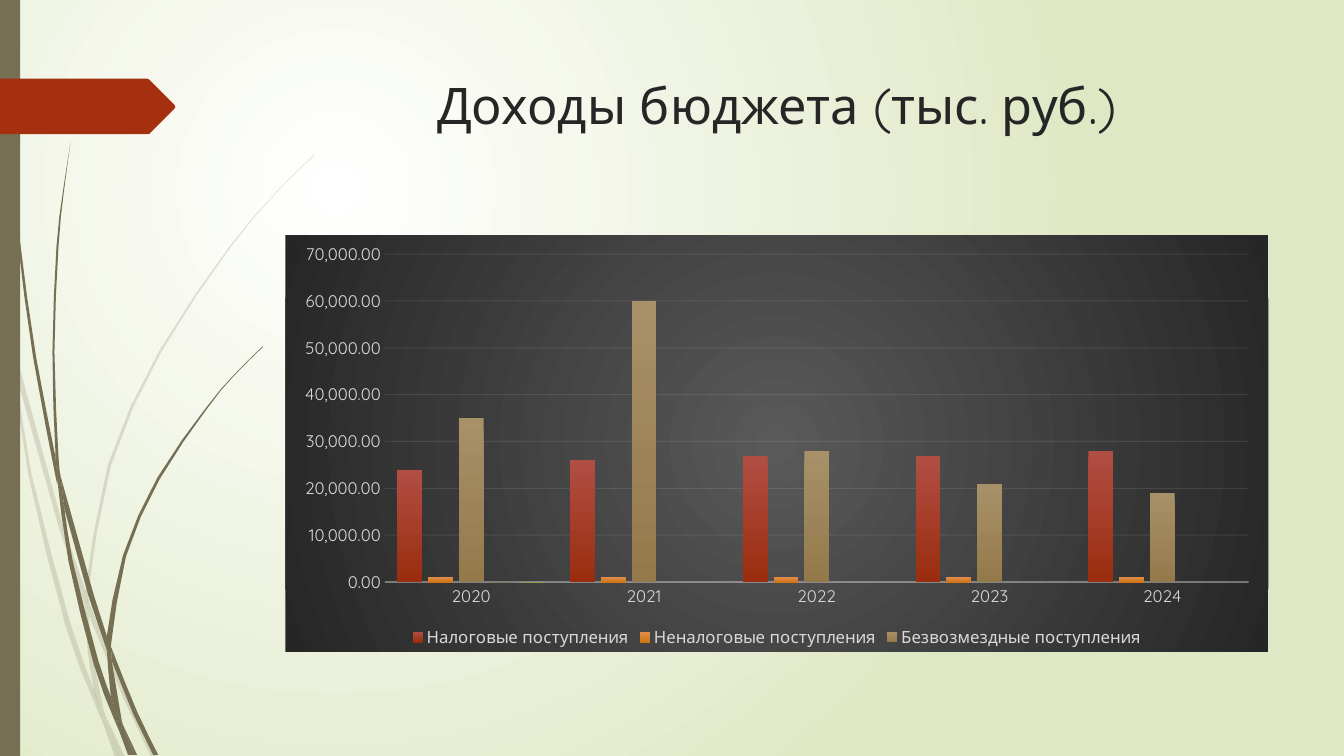
from pptx import Presentation
from pptx.chart.data import CategoryChartData
from pptx.dml.color import RGBColor
from pptx.dml.fill import FillFormat
from pptx.enum.chart import XL_CHART_TYPE as ChartType, XL_LEGEND_POSITION as LegendPosition
from pptx.enum.chart import XL_TICK_MARK as TickMark
from pptx.enum.shapes import MSO_SHAPE as Preset
from pptx.enum.text import PP_ALIGN as Align
from pptx.oxml import parse_xml
from pptx.oxml.ns import nsdecls, qn
from pptx.util import Inches, Pt

FONT = "Quicksand"
TITLE = "Доходы бюджета (тыс. руб.)"
YEARS = ["2020", "2021", "2022", "2023", "2024"]
SERIES = [
    ("Налоговые поступления", [24000, 26000, 27000, 27000, 28000], "B14E43", "9A2D0F"),
    ("Неналоговые поступления", [1000, 1000, 1000, 1000, 1000], "E18D4C", "CF7516"),
    ("Безвозмездные поступления", [35000, 60000, 28000, 21000, 19000], "A89068", "947A4B"),
    ("Series 4", [0], "819367", "6A7D4D"),
    ("Series 5", [0], "9DB265", "889E47"),
]
HIDDEN_LEGEND_ENTRIES = [3, 4]

WHITE = RGBColor(0xFF, 0xFF, 0xFF)
BLACK = RGBColor(0, 0, 0)
PALE_GREEN = RGBColor(0xDF, 0xE8, 0xC4)
OLIVE = RGBColor(0x76, 0x6F, 0x54)
RUST = RGBColor(0xA5, 0x30, 0x10)
INK = RGBColor(0x26, 0x26, 0x26)
GREY = RGBColor(0x59, 0x59, 0x59)
LABEL = RGBColor(0xD9, 0xD9, 0xD9)
RULE = RGBColor(0xF2, 0xF2, 0xF2)

MARKER = [(0, 0.78), (1.46, 0.78), (1.48, 0.79), (1.73, 1.04), (1.74, 1.06),
          (1.73, 1.08), (1.48, 1.33), (0, 1.33)]

FAINT_BLADES = [
    ([(0.11, 3.5), (0.09, 3.22), (0, 2.82)], [(0, 2.99), (0.1, 3.44)]),
    ([(0.14, 3.45), (0.62, 5.2), (0.85, 5.86)],
     [(0.84, 5.99), (0.58, 5.22), (0.17, 3.76)]),
    ([(0.88, 5.96), (0.92, 6.07), (1.27, 6.92), (1.55, 7.51)],
     [(1.5, 7.51), (1.23, 6.94), (0.88, 6.1)]),
    ([(1.05, 7.11), (1.24, 7.51)], [(1.19, 7.51)]),
    ([(0.11, 3.5), (0.17, 3.76), (0.31, 4.69), (0.7, 6.19), (0.93, 6.83), (0.99, 7.07)],
     [(1.01, 7.14), (0.92, 6.93), (0.65, 6.21), (0.28, 4.7), (0.11, 3.5)]),
    ([(0.84, 5.99), (0.87, 6.46), (0.93, 6.83), (0.96, 6.92), (1.05, 7.11)],
     [(1.03, 7.06), (0.91, 6.46), (0.88, 6.1)]),
    ([(0.88, 5.96), (0.88, 5.84), (1.1, 4.62), (1.6, 3.49), (2.29, 2.45), (2.68, 1.98),
      (2.9, 1.75), (3.12, 1.54)],
     [(3.12, 1.53), (2.89, 1.75), (2.68, 1.97), (2.28, 2.44), (1.58, 3.48), (1.07, 4.61),
      (0.85, 5.84), (0.85, 5.86)]),
    ([(1.01, 7.14), (1.14, 7.51)], [(1.19, 7.51)]),
    ([(0.88, 6.1), (0.88, 5.96), (0.85, 5.86)], [(0.84, 5.99), (0.88, 6.08)]),
    ([(0.93, 6.83), (0.99, 7.07), (1.01, 7.14), (1.19, 7.51)],
     [(1.19, 7.51), (1.05, 7.11), (0.96, 6.92)]),
]
DARK_BLADES = [
    ([(0.03, 0), (0.04, 0.48), (0.07, 1.1), (0.17, 2.33), (0.33, 3.55), (0.56, 4.77)],
     [(0.57, 4.81), (0.55, 4.53), (0.36, 3.55), (0.19, 2.32), (0.08, 1.09), (0.05, 0.48),
      (0.04, 0)]),
    ([(0.6, 4.72), (0.93, 5.9), (1.06, 6.31)], [(1.06, 6.45), (0.88, 5.92), (0.64, 5.05)]),
    ([(1.1, 6.41), (1.13, 6.49), (1.36, 7.06), (1.57, 7.49)],
     [(1.52, 7.49), (1.32, 7.08), (1.11, 6.56)]),
    ([(0.57, 4.77), (0.64, 5.05), (0.72, 5.56), (0.98, 6.57), (1.1, 6.91), (1.16, 7.17)],
     [(1.17, 7.22), (1.11, 7.08), (0.93, 6.59), (0.68, 5.57), (0.57, 4.77)]),
    ([(0.6, 4.72), (0.58, 4.53), (0.54, 3.49), (0.58, 2.45), (0.63, 1.93), (0.7, 1.41)],
     [(0.7, 1.41), (0.62, 1.93), (0.56, 2.45), (0.52, 3.49), (0.55, 4.49), (0.6, 4.72)]),
    ([(1.22, 7.19), (1.36, 7.49)], [(1.33, 7.49)]),
    ([(0.55, 4.49), (0.6, 4.72), (0.64, 5.05)], [(0.57, 4.77), (0.55, 4.53)]),
    ([(1.11, 6.33), (1.25, 5.52), (1.58, 4.76), (2.05, 4.06), (2.31, 3.74), (2.61, 3.44)],
     [(2.6, 3.44), (2.31, 3.73), (2.04, 4.05), (1.56, 4.74), (1.22, 5.51), (1.06, 6.31),
      (1.1, 6.41)]),
    ([(1.17, 7.22), (1.27, 7.49)], [(1.31, 7.49)]),
    ([(1.06, 6.45), (1.1, 6.91), (1.16, 7.06), (1.22, 7.19)], [(1.21, 7.16), (1.11, 6.56)]),
    ([(1.06, 6.31), (1.06, 6.45), (1.11, 6.56)], [(1.1, 6.41)]),
    ([(1.1, 6.91), (1.16, 7.17), (1.17, 7.22), (1.3, 7.49)],
     [(1.33, 7.49), (1.22, 7.19), (1.16, 7.06)]),
]


def smooth(knots):
    if len(knots) < 4:
        return knots
    padded = [knots[0], *knots, knots[-1]]
    points = [knots[0]]
    for a, b, c, d in zip(padded, padded[1:], padded[2:], padded[3:]):
        middle = tuple((9 * (q + r) - p - s) / 16 for p, q, r, s in zip(a, b, c, d))
        points += [middle, c]
    return points


def set_opacity(element, percent):
    for colour in element.iter(qn("a:srgbClr")):
        colour.append(parse_xml(f'<a:alpha {nsdecls("a")} val="{percent * 1000}"/>'))


def paint(shape, colour):
    shape.fill.solid()
    shape.fill.fore_color.rgb = colour
    shape.line.fill.background()
    shape.shadow.inherit = False


def draw_outline(shapes, points, colour):
    corners = [(Inches(x), Inches(y)) for x, y in points]
    builder = shapes.build_freeform(*corners[0], scale=1)
    builder.add_line_segments(corners[1:], close=True)
    shape = builder.convert_to_shape()
    paint(shape, colour)
    return shape


def set_gradient(fill, first, last):
    fill.gradient()
    fill.gradient_angle = 270
    for stop, colour in zip(fill.gradient_stops, (first, last)):
        stop.color.rgb = colour


def make_radial(owner, left, top, right, bottom):
    linear = owner.find(".//" + qn("a:lin"))
    linear.getparent().replace(linear, parse_xml(
        f'<a:path {nsdecls("a")} path="circle"><a:fillToRect l="{left}000" t="{top}000" '
        f'r="{right}000" b="{bottom}000"/></a:path>'))


def set_font(font, size, colour):
    font.name, font.size, font.color.rgb = FONT, Pt(size), colour


def add_title(page):
    box = page.shapes.add_textbox(Inches(2.83), Inches(0.69), Inches(9.75), Inches(1.4))
    box.text_frame.word_wrap = True
    para = box.text_frame.paragraphs[0]
    para.text, para.alignment = TITLE, Align.CENTER
    set_font(para.font, 36, INK)


def add_income_chart(page):
    data = CategoryChartData(number_format="#,##0.00")
    data.categories = YEARS
    for name, values, *_ in SERIES:
        data.add_series(name, values)
    chart = page.shapes.add_chart(ChartType.COLUMN_CLUSTERED, Inches(2.83), Inches(2.335),
                                  Inches(9.75), Inches(4.13), data).chart
    chart.has_title = False
    set_font(chart.font, 10, BLACK)
    area = parse_xml(f'<c:spPr {nsdecls("c", "a")}><a:ln><a:noFill/></a:ln></c:spPr>')
    chart.element.find(qn("c:chart")).addnext(area)
    set_gradient(FillFormat.from_fill_parent(area), GREY, INK)
    make_radial(area, 50, 50, 50, 50)

    plot = chart.plots[0]
    plot.gap_width, plot.overlap, plot.vary_by_categories = 100, -24, False
    for series, (_, _, first, last) in zip(plot.series, SERIES):
        set_gradient(series.format.fill, RGBColor.from_string(first), RGBColor.from_string(last))

    years, amounts = chart.category_axis, chart.value_axis
    for axis in (years, amounts):
        axis.major_tick_mark = axis.minor_tick_mark = TickMark.NONE
        set_font(axis.tick_labels.font, 12, LABEL)
    amounts.minimum_scale, amounts.maximum_scale, amounts.major_unit = 0, 70000, 10000
    amounts.tick_labels.number_format = "#,##0.00"
    amounts.tick_labels.number_format_is_linked = False
    amounts.format.line.fill.background()
    for line, width in ((years.format.line, 1), (amounts.major_gridlines.format.line, 0.75)):
        line.color.rgb, line.width = RULE, Pt(width)
    set_opacity(chart.element.find(".//" + qn("c:catAx")).find(qn("c:spPr")), 54)
    set_opacity(chart.element.find(".//" + qn("c:majorGridlines")), 10)

    chart.has_legend = True
    legend = chart.legend
    legend.position, legend.include_in_layout = LegendPosition.BOTTOM, False
    set_font(legend.font, 12, LABEL)
    position = chart.element.find(".//" + qn("c:legendPos"))
    for index in reversed(HIDDEN_LEGEND_ENTRIES):
        position.addnext(parse_xml(f'<c:legendEntry {nsdecls("c")}><c:idx val="{index}"/>'
                                   '<c:delete val="1"/></c:legendEntry>'))


def main():
    deck = Presentation()
    deck.slide_width, deck.slide_height = Inches(13.33), Inches(7.5)
    page = deck.slides.add_slide(deck.slide_layouts[6])
    set_gradient(page.background.fill, WHITE, PALE_GREEN)
    make_radial(page.element, 50, 50, 100, 100)
    for blades, opacity in ((FAINT_BLADES, 20), (DARK_BLADES, 100)):
        group = page.shapes.add_group_shape()
        for out, back in blades:
            blade = draw_outline(group.shapes, smooth(out) + smooth(back), OLIVE)
            if opacity < 100:
                set_opacity(blade.element, opacity)
    spine = page.shapes.add_shape(Preset.RECTANGLE, 0, 0, Inches(0.2), deck.slide_height)
    paint(spine, OLIVE)
    draw_outline(page.shapes, MARKER, RUST)
    add_title(page)
    add_income_chart(page)
    deck.save("out.pptx")


if __name__ == "__main__":
    main()
